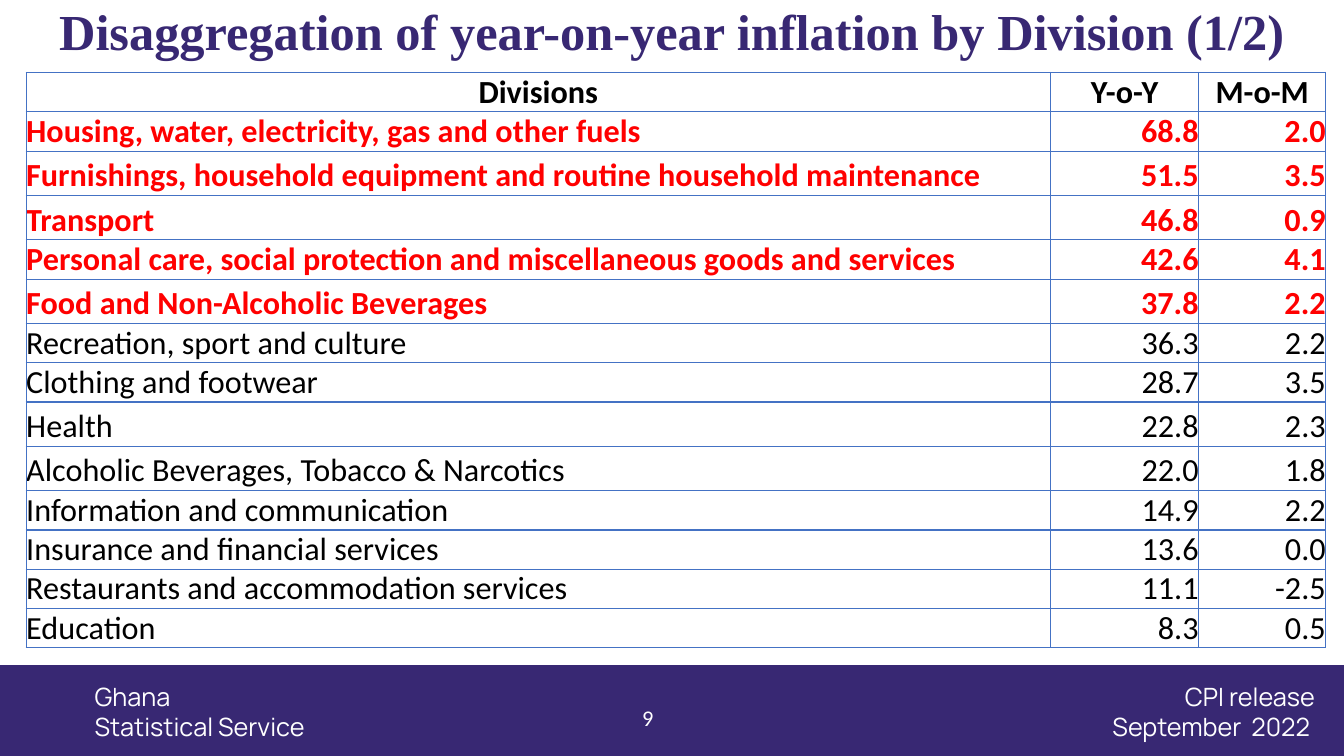
"""Build the slide on year-on-year inflation by division."""
from lxml.etree import SubElement
from pptx import Presentation
from pptx.dml.color import RGBColor
from pptx.enum.shapes import MSO_SHAPE
from pptx.enum.text import MSO_ANCHOR as Anchor, MSO_AUTO_SIZE as AutoSize, PP_ALIGN as Align
from pptx.oxml.ns import qn
from pptx.util import Inches, Pt

PURPLE = RGBColor(0x38, 0x28, 0x73)
WHITE = RGBColor(0xFF, 0xFF, 0xFF)
BLACK = RGBColor(0x00, 0x00, 0x00)
RED = RGBColor(0xFF, 0x00, 0x00)
BLUE = RGBColor(0x44, 0x72, 0xC4)

HEADINGS = ("Divisions", "Y-o-Y", "M-o-M")
INFLATION = [
    ("Housing, water, electricity, gas and other fuels", "68.8", "2.0"),
    ("Furnishings, household equipment and routine household maintenance", "51.5", "3.5"),
    ("Transport", "46.8", "0.9"),
    ("Personal care, social protection and miscellaneous goods and services", "42.6", "4.1"),
    ("Food and Non-Alcoholic Beverages", "37.8", "2.2"),
    ("Recreation, sport and culture", "36.3", "2.2"),
    ("Clothing and footwear", "28.7", "3.5"),
    ("Health", "22.8", "2.3"),
    ("Alcoholic Beverages, Tobacco & Narcotics", "22.0", "1.8"),
    ("Information and communication", "14.9", "2.2"),
    ("Insurance and financial services", "13.6", "0.0"),
    ("Restaurants and accommodation services", "11.1", "-2.5"),
    ("Education", "8.3", "0.5"),
]
HIGHLIGHTED_ROWS = 5
TALL_ROWS = (2, 3, 5, 8, 9)
COLUMN_WIDTHS = (10.16, 1.47, 1.26)


def add_run(paragraph, text, font_name, size, color, bold=False):
    run = paragraph.add_run()
    run.text = text
    run.font.name = font_name
    run.font.size = Pt(size)
    run.font.bold = bold
    run.font.color.rgb = color


def add_borders(cell):
    properties = cell._tc.get_or_add_tcPr()
    for side in ("lnL", "lnR", "lnT", "lnB"):
        border = SubElement(properties, qn(f"a:{side}"), w=str(Pt(1)))
        fill = SubElement(border, qn("a:solidFill"))
        SubElement(fill, qn("a:srgbClr"), val=str(BLUE))


prs = Presentation()
prs.slide_width = Inches(13.33)
prs.slide_height = Inches(7.5)
slide = prs.slides.add_slide(prs.slide_layouts[5])

title = slide.shapes.title
title.left, title.top = Inches(0), Inches(0.04)
title.width, title.height = Inches(13.33), Inches(0.59)
title.text_frame.auto_size = AutoSize.NONE
title.text_frame.vertical_anchor = Anchor.MIDDLE
heading = title.text_frame.paragraphs[0]
heading.alignment = Align.CENTER
heading.line_spacing = 0.9
add_run(heading, "Disaggregation of year-on-year inflation by Division (1/2)",
        "Times New Roman", 36, PURPLE, True)

footer_band = slide.shapes.add_shape(
    MSO_SHAPE.RECTANGLE, Inches(0), Inches(6.6), Inches(13.33), Inches(0.9))
footer_band.shadow.inherit = False
footer_band.fill.solid()
footer_band.fill.fore_color.rgb = PURPLE
footer_band.line.fill.background()

FOOTERS = [
    (0.84, 6.7, 2.48, 0.71, Align.LEFT, "Manrope", 18, ("Ghana", "Statistical Service")),
    (10.79, 6.7, 2.35, 0.71, Align.RIGHT, "Manrope", 18, ("CPI release", "September  2022 ")),
    (6.25, 6.92, 0.33, 0.4, Align.RIGHT, "Calibri", 16, ("9",)),
]
for left, top, width, height, alignment, font_name, size, lines in FOOTERS:
    footer = slide.shapes.add_textbox(
        Inches(left), Inches(top), Inches(width), Inches(height)).text_frame
    footer.word_wrap = True
    footer.vertical_anchor = Anchor.MIDDLE
    for index, line in enumerate(lines):
        paragraph = footer.add_paragraph() if index else footer.paragraphs[0]
        paragraph.alignment = alignment
        add_run(paragraph, line, font_name, size, WHITE)

rows = [HEADINGS] + INFLATION
table = slide.shapes.add_table(
    len(rows), len(HEADINGS), Inches(0.26), Inches(0.72), Inches(12.89), Inches(5.71)).table
table.first_row = False
table.horz_banding = False
for column, width in zip(table.columns, COLUMN_WIDTHS):
    column.width = Inches(width)

for row_index, values in enumerate(rows):
    table.rows[row_index].height = Inches(0.44 if row_index in TALL_ROWS else 0.39)
    is_heading = row_index == 0
    is_highlighted = 1 <= row_index <= HIGHLIGHTED_ROWS
    for column_index, value in enumerate(values):
        cell = table.cell(row_index, column_index)
        cell.margin_left = cell.margin_right = Inches(0.01 if is_heading else 0)
        cell.margin_top = cell.margin_bottom = Inches(0)
        cell.vertical_anchor = Anchor.BOTTOM
        add_borders(cell)
        cell.fill.background()
        paragraph = cell.text_frame.paragraphs[0]
        if is_heading:
            paragraph.alignment = Align.CENTER
        else:
            paragraph.alignment = Align.RIGHT if column_index else Align.LEFT
        add_run(paragraph, value, "Calibri", 23, RED if is_highlighted else BLACK,
                is_heading or is_highlighted)

prs.save("out.pptx")
